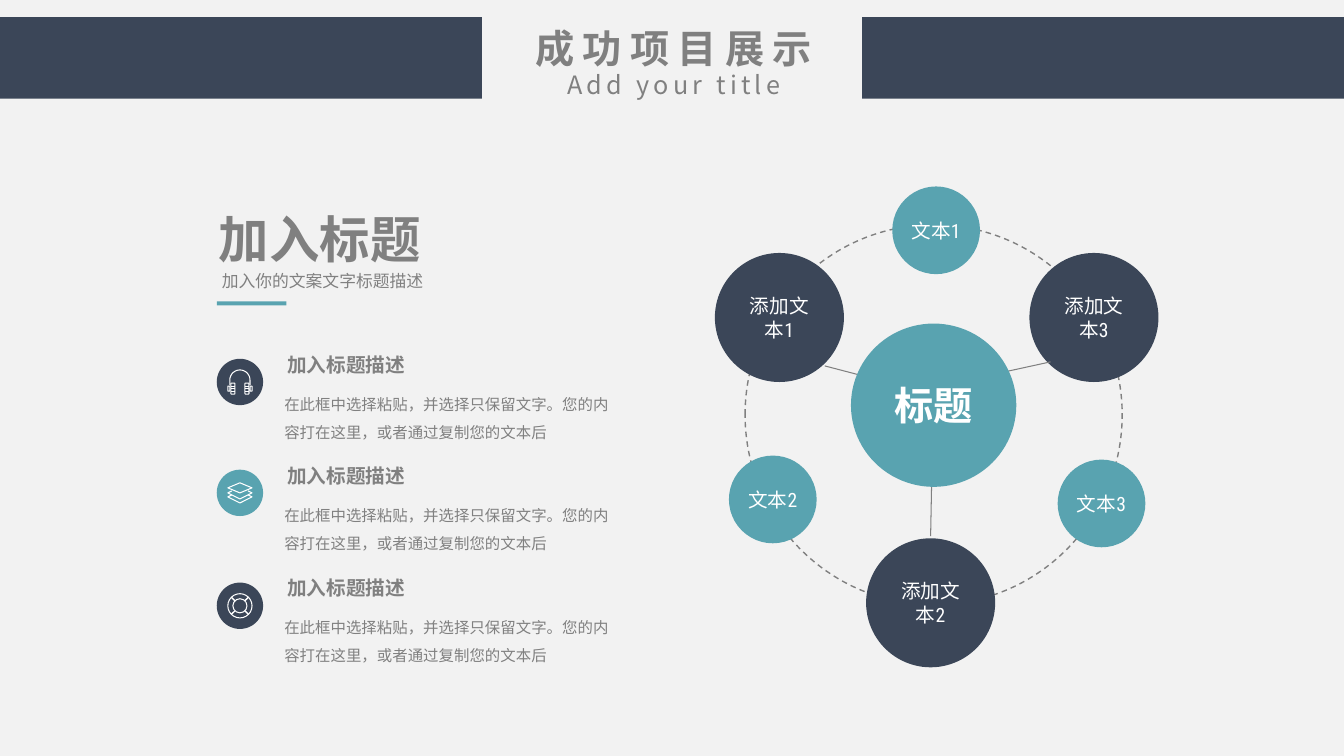
"""Build the project showcase slide with its icon list and circle diagram."""
import dataclasses
import math

import pptx
import pptx.dml.color
import pptx.enum.dml
import pptx.enum.shapes
import pptx.enum.text
import pptx.oxml
import pptx.oxml.ns
import pptx.util

Inches = pptx.util.Inches
SHAPES = pptx.enum.shapes.MSO_SHAPE
ALIGN = pptx.enum.text.PP_ALIGN
ANCHOR = pptx.enum.text.MSO_ANCHOR
FIT = pptx.enum.text.MSO_AUTO_SIZE
SIDES = ("margin_left", "margin_top", "margin_right", "margin_bottom")


@dataclasses.dataclass(frozen=True)
class Theme:
    paper: str = "F2F2F2"
    navy: str = "3B4658"
    teal: str = "59A3B0"
    grey: str = "808080"
    white: str = "FFFFFF"
    noto: str = "Noto Sans CJK SC"
    lato: str = "Lato"
    roboto: str = "Roboto Condensed"
    banner: int = 28
    headline: int = 36
    subtitle: int = 18
    label: int = 14
    lead: int = 12
    body: int = 11


THEME = Theme()
ICON_X = 2.38
DESCRIPTION = "在此框中选择粘贴，并选择只保留文字。您的内容打在这里，或者通过复制您的文本后"


def rgb(value):
    return pptx.dml.color.RGBColor.from_string(value)


def assign(target, values):
    for name, value in values.items():
        setattr(target, name, value)


def write(shape, text, size, font, color, bold=False, tracking=0, para_format=None,
          frame_format=None, insets=(0.1, 0.05)):
    frame = shape.text_frame
    assign(frame, {"word_wrap": True, **(frame_format or {})})
    assign(frame, {side: Inches(inset) for side, inset in zip(SIDES, insets * 2)})
    para = frame.paragraphs[0]
    assign(para, para_format or {})
    span = para.add_run()
    span.text = text
    assign(span.font, {"size": pptx.util.Pt(size), "name": font, "bold": bold})
    span.font.color.rgb = rgb(color)
    properties = span.font._element
    if tracking:
        properties.set("spc", str(tracking * 100))
    east_asian = pptx.oxml.parse_xml('<a:ea %s/>' % pptx.oxml.ns.nsdecls("a"))
    east_asian.set("typeface", THEME.lato if font == THEME.noto else font)
    properties.find(pptx.oxml.ns.qn("a:latin")).addnext(east_asian)


def add_text(page, place, text, size, font, **style):
    box = page.shapes.add_textbox(*map(Inches, place))
    write(box, text, size, font, THEME.grey, **style)
    box.text_frame.auto_size = FIT.SHAPE_TO_FIT_TEXT


def paint(shape, fill=None, line=None, width=0.75):
    shape.shadow.inherit = False
    if fill:
        shape.fill.solid()
        shape.fill.fore_color.rgb = rgb(fill)
    else:
        shape.fill.background()
    if line:
        shape.line.color.rgb = rgb(line)
        shape.line.width = pptx.util.Pt(width)
    else:
        shape.line.fill.background()
    return shape


def add_shape(page, kind, place, fill=None, line=None, width=0.75):
    return paint(page.shapes.add_shape(kind, *map(Inches, place)), fill, line, width)


def add_line(page, start, end, color, width=0.75):
    line = page.shapes.add_connector(
        pptx.enum.shapes.MSO_CONNECTOR.STRAIGHT, *map(Inches, (*start, *end)))
    line.line.color.rgb = rgb(color)
    line.line.width = pptx.util.Pt(width)
    line._element.spPr.append(
        pptx.oxml.parse_xml('<a:effectLst %s/>' % pptx.oxml.ns.nsdecls("a")))


def add_outline(page, points, close=False):
    corners = [(Inches(x), Inches(y)) for x, y in points]
    builder = page.shapes.build_freeform(*corners[0])
    builder.add_line_segments(corners[1:], close=close)
    paint(builder.convert_to_shape(), line=THEME.white)


def add_ring(page, y, radius):
    add_shape(page, SHAPES.OVAL, (ICON_X - radius, y - radius, radius * 2, radius * 2),
              line=THEME.white)


def draw_headphones(page, y):
    angles = [math.radians(step * 10) for step in range(19)]
    arch = [(ICON_X - 0.1 * math.cos(angle), y - 0.02 - 0.1 * math.sin(angle))
            for angle in angles]
    add_outline(page, [(arch[0][0], y + 0.03), *arch, (arch[-1][0], y + 0.03)])
    for side in (-1, 1):
        cup, pad = ICON_X + side * 0.07, ICON_X + side * 0.11
        add_shape(page, SHAPES.ROUNDED_RECTANGLE, (cup - 0.02, y + 0.01, 0.04, 0.11),
                  line=THEME.white)
        add_shape(page, SHAPES.ROUNDED_RECTANGLE, (pad - 0.01, y + 0.04, 0.02, 0.05),
                  line=THEME.white)
        for drop in (0.04, 0.06, 0.09):
            add_line(page, (cup - 0.02, y + drop), (cup + 0.02, y + drop), THEME.white, 0.5)


def draw_layers(page, y):
    left, right = ICON_X - 0.12, ICON_X + 0.12
    add_outline(page, [(left, y - 0.05), (ICON_X, y - 0.1), (right, y - 0.05), (ICON_X, y)],
                close=True)
    for drop in (0, 0.04):
        add_outline(page, [(ICON_X - 0.08, y - 0.02 + drop), (left, y + drop),
                           (ICON_X, y + 0.06 + drop), (right, y + drop),
                           (ICON_X + 0.08, y - 0.02 + drop)])


def draw_lifebuoy(page, y):
    inner, outer = 0.07, 0.12
    add_ring(page, y, inner)
    add_ring(page, y, outer)
    for quarter in range(4):
        angle = math.radians(45 + 90 * quarter)
        start, end = [(ICON_X + reach * math.cos(angle), y + reach * math.sin(angle))
                      for reach in (inner, outer)]
        add_line(page, start, end, THEME.white, 1)


def add_banner(page):
    for left in (0, 8.55):
        add_shape(page, SHAPES.RECTANGLE, (left, 0.17, 4.78, 0.81), THEME.navy)
    centred = {"alignment": ALIGN.CENTER}
    add_text(page, (5.14, 0.19, 3.08, 0.57), "成功项目展示", THEME.banner, THEME.noto,
             bold=True, tracking=6, para_format=centred)
    add_text(page, (5.35, 0.64, 2.67, 0.4), "Add your title", THEME.subtitle, THEME.noto,
             tracking=3, para_format=centred)


def add_list(page):
    loose = {"word_wrap": False}
    add_text(page, (2.12, 2.04, 2.12, 0.66), "加入标题", THEME.headline, THEME.lato,
             bold=True, frame_format=loose, insets=(0.05, 0.02))
    add_text(page, (2.08, 2.59, 2.26, 0.36), "加入你的文案文字标题描述", THEME.lead, THEME.lato,
             para_format={"line_spacing": 1.2}, frame_format=loose, insets=(0.12, 0.06))
    add_shape(page, SHAPES.RECTANGLE, (2.15, 2.99, 0.69, 0.04), THEME.teal)
    rows = ((3.56, 3.45, THEME.navy, draw_headphones),
            (4.66, 4.55, THEME.teal, draw_layers),
            (5.78, 5.66, THEME.navy, draw_lifebuoy))
    for icon_top, text_top, color, draw_icon in rows:
        add_shape(page, SHAPES.OVAL, (2.15, icon_top, 0.46, 0.46), color)
        draw_icon(page, icon_top + 0.23)
        add_text(page, (2.75, text_top, 1.38, 0.34), "加入标题描述", THEME.label, THEME.lato,
                 bold=True, frame_format={**loose, "vertical_anchor": ANCHOR.MIDDLE})
        add_text(page, (2.7, text_top + 0.32, 3.6, 0.64), DESCRIPTION, THEME.body, THEME.noto,
                 para_format={"line_spacing": 1.5}, insets=(0.12, 0.06))


def add_bubble(page, place, color, text, size=THEME.label, bold=False, wrap=False):
    bubble = add_shape(page, SHAPES.OVAL, place, color)
    write(bubble, text, size, THEME.roboto, THEME.white, bold=bold,
          para_format={"alignment": ALIGN.CENTER},
          frame_format={"word_wrap": wrap, "vertical_anchor": ANCHOR.MIDDLE})


def add_diagram(page):
    orbit = add_shape(page, SHAPES.OVAL, (7.39, 2.23, 3.74, 3.77), line=THEME.grey, width=1)
    orbit.line.dash_style = pptx.enum.dml.MSO_LINE.DASH
    for number, corner in ((3, (10.21, 2.51)), (1, (7.09, 2.51)), (2, (8.59, 5.34))):
        add_bubble(page, (*corner, 1.28, 1.28), THEME.navy, f"添加文本{number}", wrap=True)
    for number, corner in enumerate(((8.85, 1.85), (7.23, 4.52), (10.49, 4.56)), 1):
        add_bubble(page, (*corner, 0.87, 0.87), THEME.teal, f"文本{number}")
    for start, end in (((9.23, 5.32), (9.24, 4.81)), ((8.18, 3.63), (8.64, 3.75)),
                       ((10.42, 3.59), (9.87, 3.71))):
        add_line(page, start, end, THEME.grey)
    add_bubble(page, (8.44, 3.21, 1.64, 1.62), THEME.teal, "标题", THEME.banner, bold=True)


def main():
    deck = pptx.Presentation()
    assign(deck, {"slide_width": Inches(13.33), "slide_height": Inches(7.5)})
    page = deck.slides.add_slide(deck.slide_layouts[6])
    page.background.fill.solid()
    page.background.fill.fore_color.rgb = rgb(THEME.paper)
    add_banner(page)
    add_list(page)
    add_diagram(page)
    deck.save("out.pptx")


if __name__ == "__main__":
    main()
